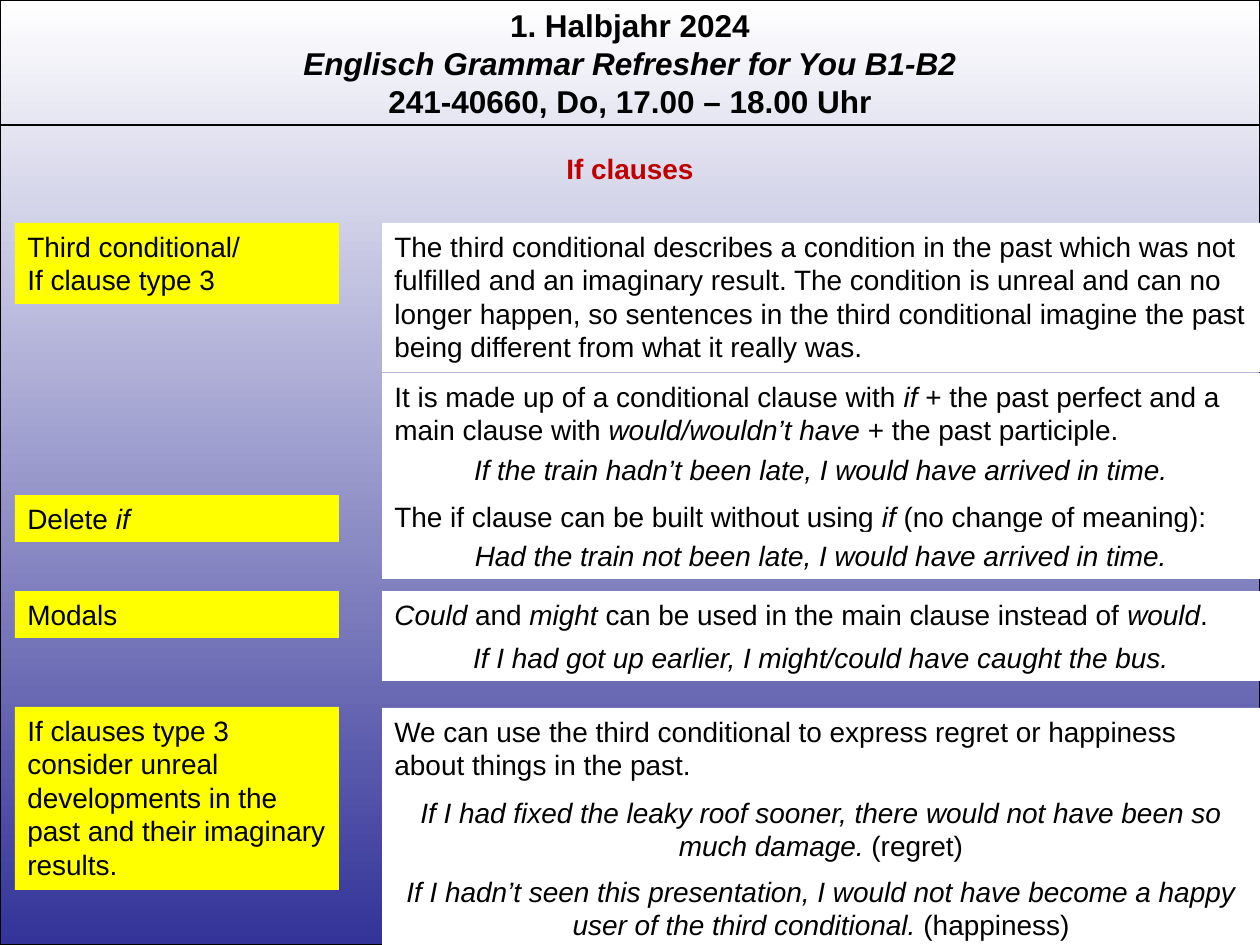
from dataclasses import dataclass
from lxml.etree import SubElement
from pptx import Presentation
from pptx.dml.color import RGBColor
from pptx.enum.shapes import MSO_CONNECTOR, MSO_SHAPE
from pptx.enum.text import MSO_ANCHOR, MSO_AUTO_SIZE, PP_ALIGN
from pptx.oxml.ns import qn
from pptx.util import Emu, Pt


@dataclass(frozen=True)
class Theme:
    font: str = "Arial"
    head: int = 18
    body: int = 16
    rule: float = 0.75
    black: str = "000000"
    white: str = "FFFFFF"
    red: str = "C00000"
    yellow: str = "FFFF00"
    blue: str = "333399"


THEME = Theme()
WIDE, HIGH = 1260, 945
LABEL = (15, 324)   # left and width of the label column
NOTE = (382, 878)   # left and width of the text column

# Top, line count, text; *stars* mark italics
LABELS = [
    (223, 2, "Third conditional/\nIf clause type 3"),
    (495, 1, "Delete *if*"),
    (591, 1, "Modals"),
    (707, 5, "If clauses type 3 consider unreal developments in the past "
             "and their imaginary results."),
]
RULES = [
    (223, 4, "The third conditional describes a condition in the past which "
             "was not fulfilled and an imaginary result. The condition is "
             "unreal and can no longer happen, so sentences in the third "
             "conditional imagine the past being different from what it "
             "really was."),
    (373, 2, "It is made up of a conditional clause with *if* + the past "
             "perfect and a main clause with *would/wouldn’t have *+ the "
             "past participle."),
    (493, 1, "The if clause can be built without using *if* (no change of "
             "meaning):"),
    (591, 1, "*Could* and *might* can be used in the main clause instead of "
             "*would*."),
    (708, 2, "We can use the third conditional to express regret or "
             "happiness about things in the past."),
]
SAMPLES = [
    (446, 1, "*If the train hadn’t been late, I would have arrived in time.*"),
    (532, 1, "*Had the train not been late, I would have arrived in time.*"),
    (634, 1, "*If I had got up earlier, I might/could have caught the bus.*"),
    (789, 2, "*If I had fixed the leaky roof sooner, there would not have "
             "been so much damage. *(regret)"),
    (868, 2, "*If I hadn’t seen this presentation, I would not have become a "
             "happy user of the third conditional. *(happiness)"),
]


def px(count):
    return Emu(round(count * 914400 / 126))


def tall(lines):
    return 13 + 34 * lines


def color(code):
    return RGBColor.from_string(code)


def write(shape, text, size=THEME.body, ink=THEME.black, bold=False,
          align=PP_ALIGN.LEFT):
    frame = shape.text_frame
    frame.word_wrap = True
    frame.auto_size = MSO_AUTO_SIZE.SHAPE_TO_FIT_TEXT
    frame.vertical_anchor = MSO_ANCHOR.TOP
    for row, line in enumerate(text.split("\n")):
        para = frame.add_paragraph() if row else frame.paragraphs[0]
        para.alignment = align
        for part, words in enumerate(line.split("*")):
            if not words:
                continue
            run = para.add_run()
            run.text = words
            font = run.font
            font.name, font.size = THEME.font, Pt(size)
            font.bold, font.italic = bold, part % 2 == 1
            font.color.rgb = color(ink)


def add_box(slide, left, top, width, height, fill=None):
    box = slide.shapes.add_shape(
        MSO_SHAPE.RECTANGLE, px(left), px(top), px(width), px(height))
    box.shadow.inherit = False
    box.line.fill.background()
    if fill:
        box.fill.solid()
        box.fill.fore_color.rgb = color(fill)
    return box


def add_stack(slide, column, rows, fill, **style):
    left, width = column
    for top, lines, text in rows:
        box = add_box(slide, left, top, width, tall(lines), fill)
        write(box, text, **style)


def add_back(slide):
    back = add_box(slide, 0, 0, WIDE, HIGH)
    back.fill.gradient()
    back.fill.gradient_angle = 270
    for stop, code in zip(back.fill.gradient_stops, (THEME.white, THEME.blue)):
        stop.color.rgb = color(code)
    back.line.color.rgb = color(THEME.black)
    back.line.width = Pt(THEME.rule)


def add_head(slide):
    head = slide.shapes.add_textbox(0, 0, px(WIDE), px(127))
    write(head, "1. Halbjahr 2024\n*Englisch Grammar Refresher for You B1-B2*\n"
                "241-40660, Do, 17.00 – 18.00 Uhr",
          size=THEME.head, bold=True, align=PP_ALIGN.CENTER)
    rule = slide.shapes.add_connector(
        MSO_CONNECTOR.STRAIGHT, 0, px(125), px(WIDE), px(125))
    rule.line.color.rgb = color(THEME.black)
    rule.line.width = Pt(THEME.rule)
    SubElement(rule.element.spPr, qn("a:effectLst"))


def set_title(slide):
    title = slide.shapes.title
    title.left, title.top = px(0), px(145)
    title.width, title.height = px(WIDE), px(tall(1))
    write(title, "If clauses", ink=THEME.red, bold=True,
          align=PP_ALIGN.CENTER)
    # Lift the title above the background
    title.element.getparent().append(title.element)


def main():
    deck = Presentation()
    deck.slide_width, deck.slide_height = px(WIDE), px(HIGH)
    slide = deck.slides.add_slide(deck.slide_layouts[5])

    # Background, course header and title
    add_back(slide)
    add_head(slide)
    set_title(slide)

    # Labels on the left, rules and sample sentences on the right
    add_stack(slide, LABEL, LABELS, THEME.yellow)
    add_stack(slide, NOTE, RULES, THEME.white)
    add_stack(slide, NOTE, SAMPLES, THEME.white, align=PP_ALIGN.CENTER)

    deck.save("out.pptx")


if __name__ == "__main__":
    main()
